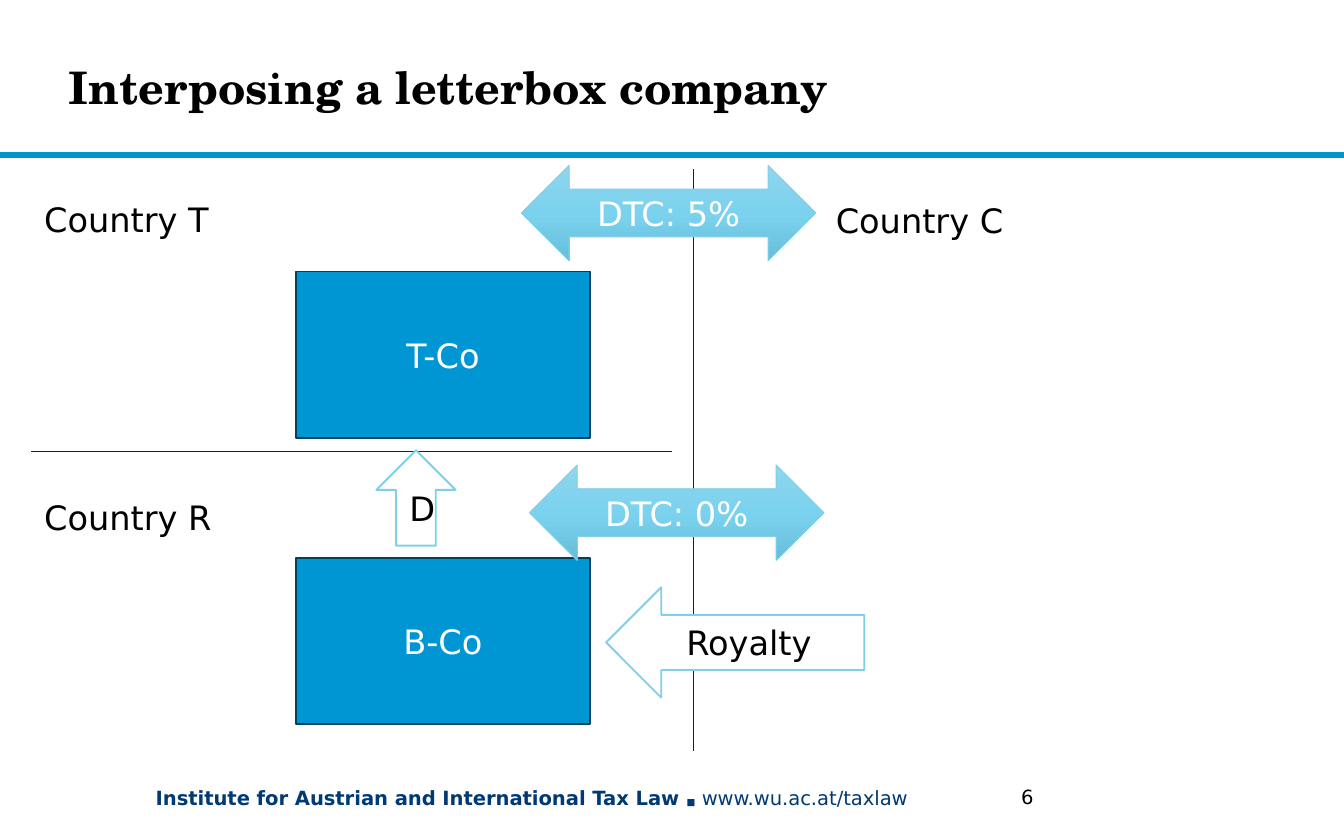
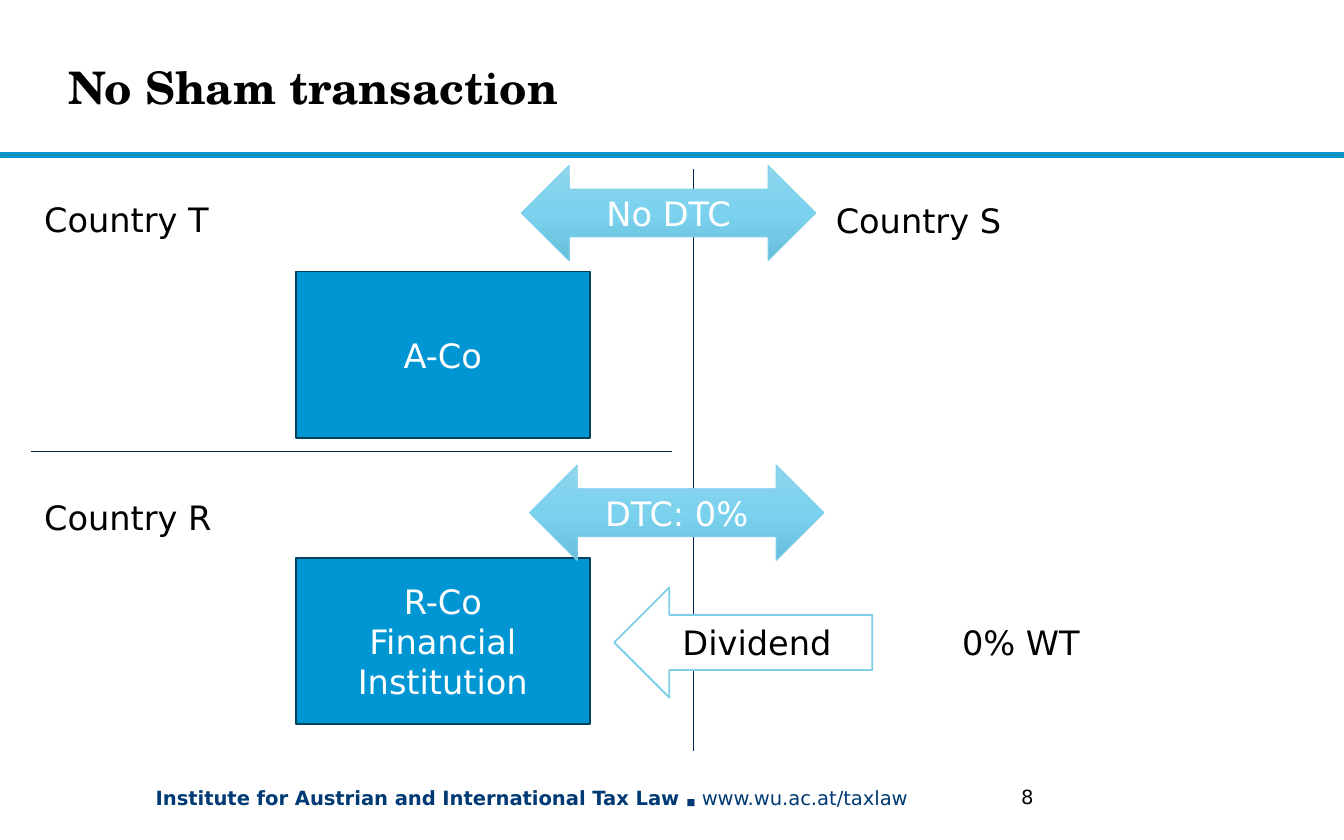
import copy

import pptx
import pptx.dml.color
import pptx.enum.shapes
import pptx.enum.text
import pptx.oxml
import pptx.util

SCALE = 9144
SHAPE = pptx.enum.shapes.MSO_SHAPE
ANCHOR = pptx.enum.text.MSO_ANCHOR
ALIGN = pptx.enum.text.PP_ALIGN
FIT = pptx.enum.text.MSO_AUTO_SIZE

BLUE, BOX_EDGE = "0096D3", "00425C"
BAND, NAVY, FOOTER = "0C94B7", "002350", "003A74"
SKY, WHITE, BLACK = "80CFE9", "FFFFFF", "000000"
TREATY_STOPS = [(0, "90D5ED"), (0.5, "7BD2EE"), (1, "66BEDA")]

BODY = {"name": "DejaVu Sans", "size": pptx.util.Pt(18), "bold": False}
SMALL = BODY | {"size": pptx.util.Pt(10.5)}
BULLET = BODY | {"size": pptx.util.Pt(5)}
TITLE = {"name": "TeX Gyre Schola", "size": pptx.util.Pt(24), "bold": True}

SLIDES = [
    {"title": "Interposing a letterbox company", "number": "6",
     "countries": ["Country T", "Country R", "Country C"],
     "companies": ["T-Co", "B-Co"], "treaties": ["DTC: 5%", "DTC: 0%"],
     "payment": ("Royalty", 428), "upward": "D"},
    {"title": "No Sham transaction", "number": "8",
     "countries": ["Country T", "Country R", "Country S"],
     "companies": ["A-Co", "R-Co\nFinancial Institution"],
     "treaties": ["No DTC", "DTC: 0%"],
     "payment": ("Dividend", 434), "remark": "0% WT"},
]


def px(*lengths):
    """Turn px lengths into EMU."""
    return [pptx.util.Emu(n * SCALE) for n in lengths]


def rgb(value):
    """Turn a hex string into a colour."""
    return pptx.dml.color.RGBColor.from_string(value)


def assign(target, values):
    """Set attributes from a dict."""
    for name, value in values.items():
        setattr(target, name, value)


def add_run(p, text, font, color):
    """Add one formatted run to a paragraph."""
    r = p.add_run()
    r.text = text
    assign(r.font, font)
    r.font.color.rgb = rgb(color)


def write(tf, text, font, color, align):
    """Write one paragraph for each line of text."""
    for i, line in enumerate(text.split("\n")):
        p = tf.add_paragraph() if i else tf.paragraphs[0]
        p.alignment = align
        add_run(p, line, font, color)


def add_text(slide, box, text="", font=BODY, fit=FIT.SHAPE_TO_FIT_TEXT):
    """Add a wrapping text box and return its frame."""
    tf = slide.shapes.add_textbox(*px(*box)).text_frame
    assign(tf, {"word_wrap": True, "auto_size": fit})
    if text:
        write(tf, text, font, BLACK, ALIGN.LEFT)
    return tf


def add_block(slide, kind, box, text, fill, edge, color, width=1):
    """Add a filled, outlined shape with centred text."""
    sp = slide.shapes.add_shape(kind, *px(*box))
    sp.shadow.inherit = False
    sp.fill.solid()
    sp.fill.fore_color.rgb = rgb(fill)
    sp.line.color.rgb = rgb(edge)
    sp.line.width = pptx.util.Pt(width)
    if text:
        sp.text_frame.vertical_anchor = ANCHOR.MIDDLE
        write(sp.text_frame, text, BODY, color, ALIGN.CENTER)
    return sp


def add_treaty(slide, box, text):
    """Add a double arrow with a vertical gradient."""
    sp = add_block(slide, SHAPE.LEFT_RIGHT_ARROW, box, text, SKY, SKY, WHITE, 0.5)
    sp.fill.gradient()
    sp.fill.gradient_angle = 270
    stops = sp._element.spPr.xpath("a:gradFill/a:gsLst")[0]
    stops.append(copy.deepcopy(stops[0]))
    for stop, (position, color) in zip(sp.fill.gradient_stops, TREATY_STOPS):
        stop.position = position
        stop.color.rgb = rgb(color)


def add_border(slide, start, end):
    """Add a thin country border."""
    line = slide.shapes.add_connector(
        pptx.enum.shapes.MSO_CONNECTOR.STRAIGHT, *px(*start, *end))
    line.line.color.rgb = rgb(NAVY)
    line.line.width = pptx.util.Pt(0.5)
    line._element.spPr.append(pptx.oxml.parse_xml(
        '<a:effectLst xmlns:a="http://schemas.openxmlformats.org/drawingml/2006/main"/>'))


def add_header(slide, box, text):
    """Place the title above the band in the given box."""
    x, y, w, h = box
    add_block(slide, SHAPE.RECTANGLE, (x, y + h, w, 3), "", BAND, BLUE, WHITE)
    sp = slide.shapes.title
    assign(sp, dict(zip(("left", "top", "width", "height"),
                        px(x + 51, y + 15, 748, h - 15))))
    tf = sp.text_frame
    assign(tf, {"margin_left": 0, "margin_top": 0, "margin_right": 0,
                "margin_bottom": 0, "vertical_anchor": ANCHOR.MIDDLE,
                "word_wrap": True, "auto_size": FIT.NONE})
    write(tf, text, TITLE, BLACK, ALIGN.LEFT)


def add_footer(slide, box, number):
    """Place the institute line and the slide number in the given box."""
    x, y, w, h = box
    p = add_text(slide, (x, y + 1, 631, h)).paragraphs[0]
    add_run(p, "Institute for Austrian and International Tax Law ",
            SMALL | {"bold": True}, FOOTER)
    add_run(p, "■", BULLET, FOOTER)
    add_run(p, " www.wu.ac.at/taxlaw", SMALL, FOOTER)
    add_text(slide, (x + w - 54, y, 54, h), number, SMALL, FIT.NONE)


def add_diagram(slide, box, data):
    """Place countries, companies, treaties and payments in the given box."""
    x, y, w, h = box
    for (dx, dy), name in zip([(0, 20), (0, 242), (589, 21)], data["countries"]):
        add_text(slide, (x + dx, y + dy, 219, 40), name)
    add_border(slide, (x + 493, y + 3), (x + 493, y + h))
    add_border(slide, (x, y + 213), (x + 477, y + 213))
    for dy, name in zip((79, 292), data["companies"]):
        add_block(slide, SHAPE.RECTANGLE, (x + 197, y + dy, 219, 124),
                  name, BLUE, BOX_EDGE, WHITE)
    payment, dx = data["payment"]
    add_block(slide, SHAPE.LEFT_ARROW, (x + dx, y + 314, 192, 82),
              payment, WHITE, SKY, BLACK)
    for (dx, dy), name in zip([(365, 0), (371, 223)], data["treaties"]):
        add_treaty(slide, (x + dx, y + dy, 219, 71), name)
    if "upward" in data:
        add_block(slide, SHAPE.UP_ARROW, (x + 257, y + 212, 59, 71),
                  data["upward"], WHITE, SKY, BLACK)
    if "remark" in data:
        add_text(slide, (x + w - 146, y + 335, 146, 40), data["remark"])


def add_slide(prs, data):
    """Build one treaty slide."""
    slide = prs.slides.add_slide(prs.slide_layouts[5])
    add_header(slide, (0, 0, 1000, 114), data["title"])
    add_footer(slide, (106, 579, 698, 28), data["number"])
    add_diagram(slide, (23, 123, 829, 436), data)


def main():
    """Build and save the presentation."""
    prs = pptx.Presentation()
    prs.slide_width, prs.slide_height = px(1000, 625)
    for data in SLIDES:
        add_slide(prs, data)
    prs.save("out.pptx")


if __name__ == "__main__":
    main()
